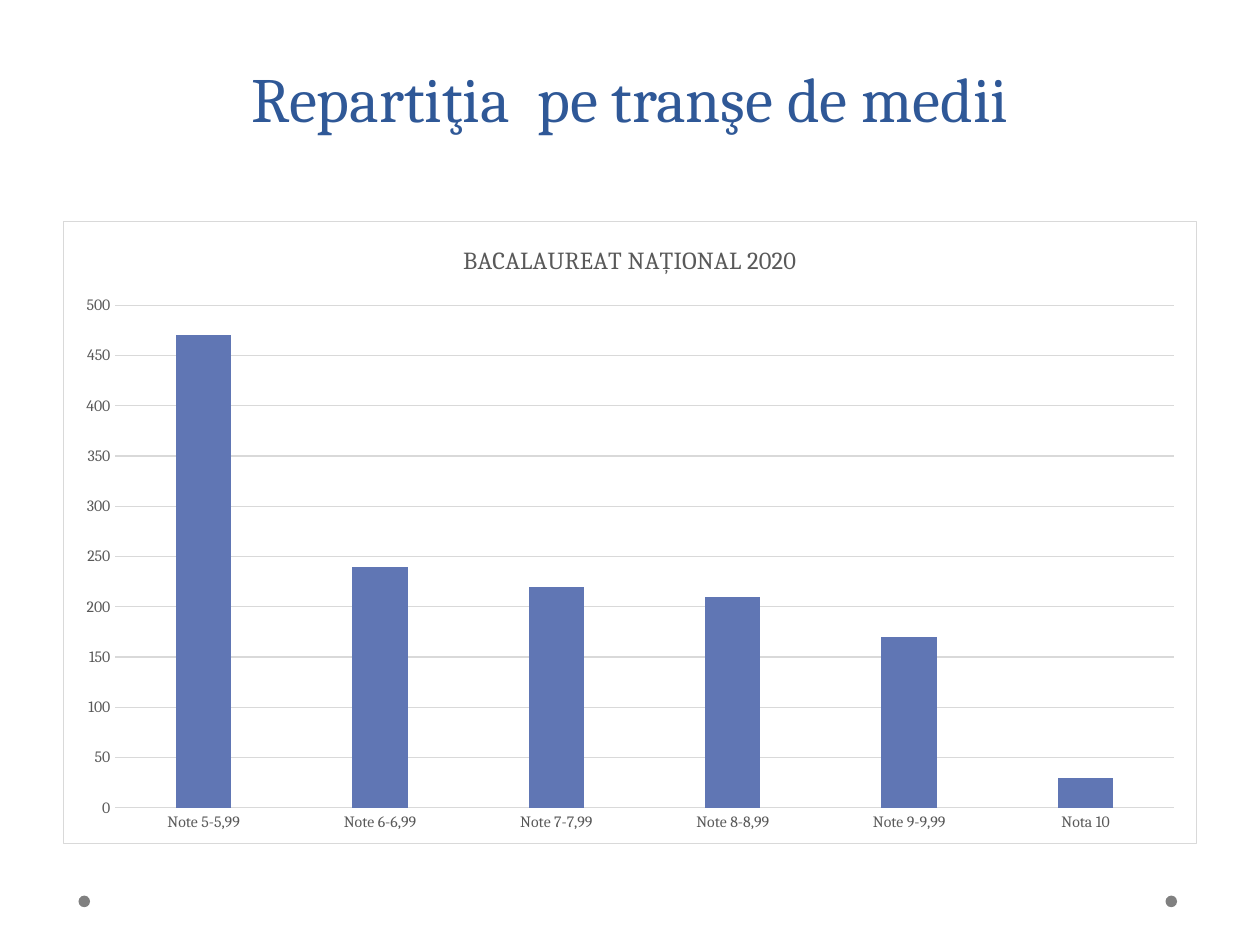
from lxml.etree import fromstring
from pptx import Presentation
from pptx.chart.data import CategoryChartData
from pptx.dml.color import RGBColor
from pptx.enum.chart import XL_CHART_TYPE, XL_TICK_MARK
from pptx.enum.shapes import MSO_SHAPE
from pptx.enum.text import MSO_ANCHOR, PP_ALIGN
from pptx.oxml.ns import nsdecls, qn
from pptx.util import Pt

GRADE_BANDS = {
    "Note 5-5,99": 470,
    "Note 6-6,99": 240,
    "Note 7-7,99": 220,
    "Note 8-8,99": 210,
    "Note 9-9,99": 170,
    "Nota 10": 30,
}


def color(hex_string):
    return RGBColor.from_string(hex_string)


class SlideBuilder:
    font_name = "Cambria"
    title_color = "2F5897"
    bar_color = "6076B4"
    text_color = "595959"
    line_color = "D9D9D9"
    dot_color = "808080"

    def __init__(self, slide):
        self.slide = slide

    def style_font(self, font, size, hex_color):
        font.name = self.font_name
        font.size = Pt(size)
        font.bold = False
        font.color.rgb = color(hex_color)

    def style_line(self, line):
        line.color.rgb = color(self.line_color)
        line.width = Pt(0.75)

    def add_dot(self, left, top, size):
        dot = self.slide.shapes.add_shape(
            MSO_SHAPE.OVAL, Pt(left), Pt(top), Pt(size), Pt(size))
        dot.shadow.inherit = False
        dot.fill.solid()
        dot.fill.fore_color.rgb = color(self.dot_color)
        dot.line.fill.background()

    def add_title(self, text, left, top, width, height):
        line_height = 58
        text_box = self.slide.shapes.add_textbox(
            Pt(left), Pt(top), Pt(width), Pt(height))
        frame = text_box.text_frame
        frame.word_wrap = True
        frame.vertical_anchor = MSO_ANCHOR.BOTTOM
        # One free line below the title
        frame.margin_bottom = Pt(line_height + 3.6)
        paragraph = frame.paragraphs[0]
        paragraph.text = text
        paragraph.alignment = PP_ALIGN.CENTER
        paragraph.line_spacing = Pt(line_height)
        self.style_font(paragraph.font, 36, self.title_color)

    def add_column_chart(self, title, values, left, top, width, height):
        data = CategoryChartData()
        data.categories = list(values)
        data.add_series("Series 1", list(values.values()))
        chart = self.slide.shapes.add_chart(
            XL_CHART_TYPE.COLUMN_CLUSTERED,
            Pt(left), Pt(top), Pt(width), Pt(height), data).chart
        self.style_font(chart.font, 10, "000000")
        chart.has_legend = False

        # Chart title
        chart.has_title = True
        chart.chart_title.include_in_layout = False
        paragraph = chart.chart_title.text_frame.paragraphs[0]
        paragraph.text = title
        self.style_font(paragraph.font, 14, self.text_color)

        # Columns
        plot = chart.plots[0]
        plot.vary_by_categories = False
        plot.gap_width = 219
        plot.overlap = -27
        fill = plot.series[0].format.fill
        fill.solid()
        fill.fore_color.rgb = color(self.bar_color)

        # Axes
        for axis in (chart.category_axis, chart.value_axis):
            axis.major_tick_mark = XL_TICK_MARK.NONE
            axis.minor_tick_mark = XL_TICK_MARK.NONE
            self.style_font(axis.tick_labels.font, 9, self.text_color)
        self.style_line(chart.category_axis.format.line)
        value_axis = chart.value_axis
        value_axis.minimum_scale = 0
        value_axis.maximum_scale = 500
        value_axis.major_unit = 50
        value_axis.format.line.fill.background()
        self.style_line(value_axis.major_gridlines.format.line)

        # Chart background and border
        area_format = fromstring(
            f'<c:spPr {nsdecls("c", "a")}>'
            '<a:solidFill><a:srgbClr val="FFFFFF"/></a:solidFill>'
            f'<a:ln w="{Pt(0.75)}"><a:solidFill>'
            f'<a:srgbClr val="{self.line_color}"/></a:solidFill></a:ln>'
            '</c:spPr>')
        chart.element.find(qn("c:chart")).addnext(area_format)


def main():
    presentation = Presentation()
    presentation.slide_width = Pt(720)
    presentation.slide_height = Pt(540)
    slide = presentation.slides.add_slide(presentation.slide_layouts[6])
    builder = SlideBuilder(slide)

    # Footer dots
    for left in (666, 44.85):
        builder.add_dot(left, 511.8, 6.6)

    # Title and chart
    builder.add_title("Repartiţia  pe tranşe de medii", 36, 13, 648, 126)
    builder.add_column_chart(
        "BACALAUREAT NAȚIONAL 2020", GRADE_BANDS, 36, 126, 648, 356.4)

    presentation.save("out.pptx")


if __name__ == "__main__":
    main()
